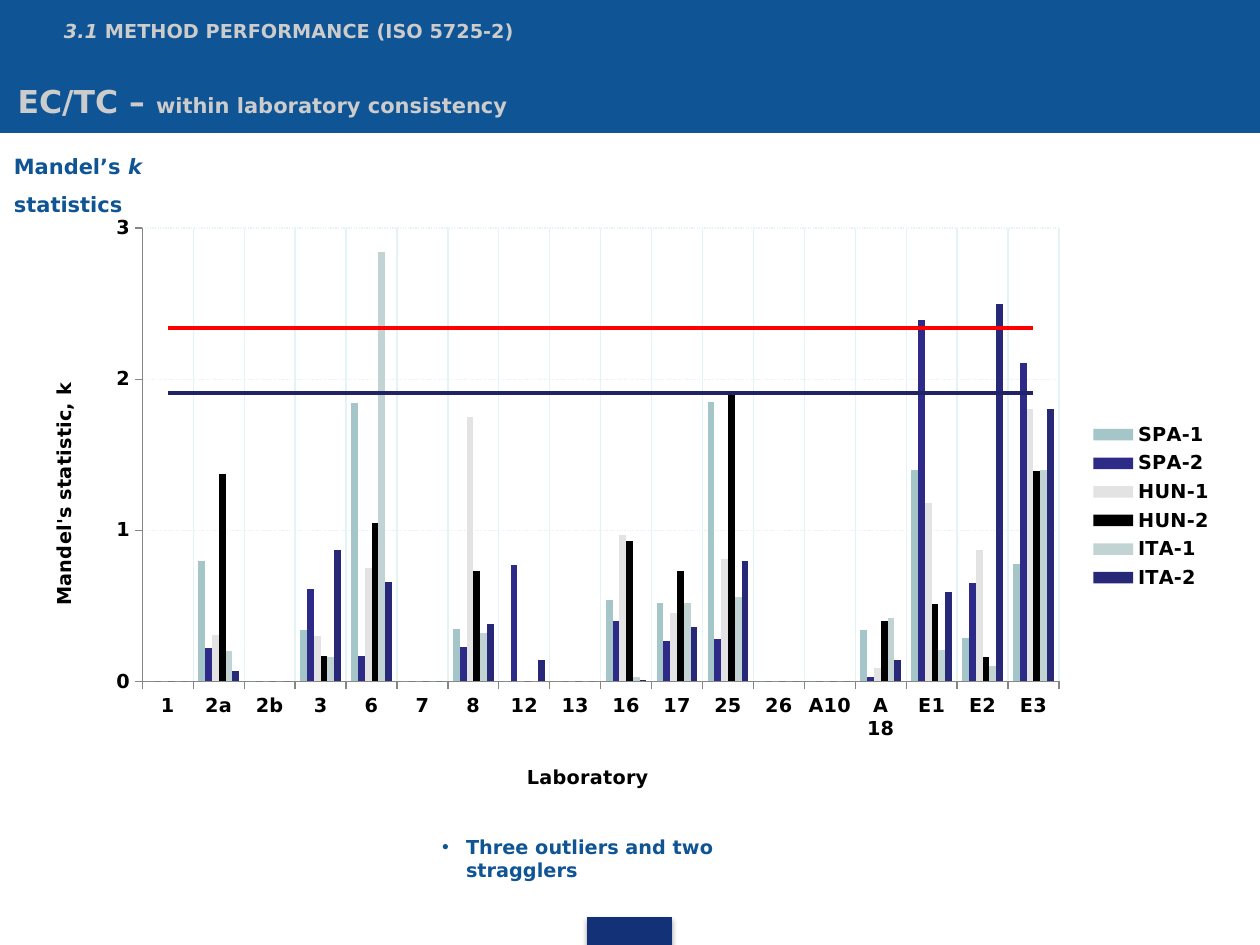
import dataclasses

import lxml.etree
import pptx
import pptx.chart.data
import pptx.dml.color
import pptx.enum.chart
import pptx.enum.dml
import pptx.enum.shapes
import pptx.enum.text
import pptx.oxml.ns
import pptx.util

Cm, Pt = pptx.util.Cm, pptx.util.Pt
qn = pptx.oxml.ns.qn


@dataclasses.dataclass(frozen=True)
class Theme:
    font: str = "DejaVu Sans"
    blue: str = "0F5494"
    navy: str = "133176"
    light: str = "CCCCCC"
    white: str = "FFFFFF"
    black: str = "000000"
    grid: str = "E4F3F4"
    axis: str = "868686"
    bars: tuple = ("A5C6C9", "2D2B87", "E3E3E3", "000000", "C2D3D4", "282878")
    limits: tuple = ("FF0000", "222267")
    small: int = 11
    medium: int = 12
    large: int = 18


theme = Theme()


def rgb(value):
    return pptx.dml.color.RGBColor.from_string(value)


def style(font, size, color):
    """Apply the slide's bold typeface in the given size and colour."""
    font.name, font.bold = theme.font, True
    font.size, font.color.rgb = Pt(size), rgb(color)


deck = pptx.Presentation()
deck.slide_width, deck.slide_height = Cm(25.4), Cm(19.05)
page = deck.slides.add_slide(deck.slide_layouts[1])
title, body = page.placeholders

# Banner and footer tab, behind the placeholders
for left, top, width, height, color in (
    (0, 0, 25.4, 2.67, theme.blue),
    (11.84, 18.49, 1.7, 0.56, theme.navy),
):
    block = page.shapes.add_shape(
        pptx.enum.shapes.MSO_SHAPE.RECTANGLE, Cm(left), Cm(top), Cm(width), Cm(height))
    block.shadow.inherit = False
    block.fill.solid()
    block.fill.fore_color.rgb = block.line.color.rgb = rgb(color)
    block.line.width = Pt(0.75)
    title._element.addprevious(block._element)

effects = block._element.spPr.find(qn("a:effectLst"))
shadow = lxml.etree.SubElement(
    effects, qn("a:outerShdw"), blurRad=str(Pt(3.1)), dist=str(Pt(1.8)), dir="5400000")
shade = lxml.etree.SubElement(shadow, qn("a:srgbClr"), val=theme.black)
lxml.etree.SubElement(shade, qn("a:alpha"), val="35000")

# Texts: box, place, anchor, colour, runs of (text, size, italic)
section = page.shapes.add_textbox(0, 0, 0, 0)
caption = page.shapes.add_textbox(0, 0, 0, 0)
top_anchor = pptx.enum.text.MSO_ANCHOR.TOP
middle = pptx.enum.text.MSO_ANCHOR.MIDDLE
for box, place, anchor, color, spans in (
    (section, (0.05, 0.38, 22.86, 1.5), top_anchor, theme.light,
     (("3.1 ", theme.small, True),
      ("METHOD PERFORMANCE (ISO 5725-2)", theme.small, False))),
    (caption, (0.03, 2.72, 5.3, 1.73), top_anchor, theme.blue,
     (("Mandel’s ", theme.medium, False), ("k", theme.medium, True),
      (" statistics", theme.medium, False))),
    (title, (0.1, 1.52, 10.77, 1.02), middle, theme.light,
     (("EC/TC – ", theme.large, False),
      ("within laboratory consistency", theme.medium, False))),
    (body, (8.66, 16.71, 8.36, 0.74), top_anchor, theme.blue,
     (("Three outliers and two stragglers", theme.small, False),)),
):
    box.left, box.top, box.width, box.height = (Cm(length) for length in place)
    frame = box.text_frame
    frame.auto_size = pptx.enum.text.MSO_AUTO_SIZE.NONE
    frame.word_wrap = box is not body
    frame.vertical_anchor = anchor
    para = frame.paragraphs[0]
    para.alignment = pptx.enum.text.PP_ALIGN.LEFT
    para.space_before = Pt(0)
    if box is body:
        props = para._p.get_or_add_pPr()
        props.set("marL", str(Cm(0.48)))
        props.set("indent", str(Cm(-0.48)))
        lxml.etree.SubElement(props, qn("a:buChar"), char="•")
    style(para.font, spans[0][1], color)
    for text, size, italic in spans:
        span = para.add_run()
        span.text = text
        if size != spans[0][1]:
            span.font.size = Pt(size)
        if italic:
            span.font.italic = True
section.text_frame.margin_left = Cm(1.24)
section.text_frame.margin_top = 0
caption.text_frame.paragraphs[0].line_spacing = 1.5
caption.fill.solid()
caption.fill.fore_color.rgb = rgb(theme.white)

# Chart: clustered columns with two limit lines
labs = ["1", "2a", "2b", "3", "6", "7", "8", "12", "13", "16", "17", "25", "26",
        "A10", "A 18", "E1", "E2", "E3"]
columns = {
    "SPA-1": (0, 0.8, 0, 0.34, 1.84, 0, 0.35, 0, 0, 0.54, 0.52, 1.85, 0, 0, 0.34, 1.4, 0.29, 0.78),
    "SPA-2": (0, 0.22, 0, 0.61, 0.17, 0, 0.23, 0.77, 0, 0.4, 0.27, 0.28, 0, 0, 0.03, 2.39, 0.65, 2.11),
    "HUN-1": (0, 0.31, 0, 0.3, 0.75, 0, 1.75, 0, 0, 0.97, 0.45, 0.81, 0, 0, 0.09, 1.18, 0.87, 1.8),
    "HUN-2": (0, 1.37, 0, 0.17, 1.05, 0, 0.73, 0, 0, 0.93, 0.73, 1.92, 0, 0, 0.4, 0.51, 0.16, 1.39),
    "ITA-1": (0, 0.2, 0, 0.16, 2.84, 0, 0.32, 0, 0, 0.03, 0.52, 0.56, 0, 0, 0.42, 0.21, 0.1, 1.4),
    "ITA-2": (0, 0.07, 0, 0.87, 0.66, 0, 0.38, 0.14, 0, 0.01, 0.36, 0.8, 0, 0, 0.14, 0.59, 2.5, 1.8),
}
limits = {"Series 7": 2.34, "Series 8": 1.91}
data = pptx.chart.data.CategoryChartData()
data.categories = labs
for name, values in columns.items():
    data.add_series(name, values)
for name, value in limits.items():
    data.add_series(name, [value] * len(labs))
chart = page.shapes.add_chart(
    pptx.enum.chart.XL_CHART_TYPE.COLUMN_CLUSTERED,
    Cm(0.71), Cm(4.11), Cm(24), Cm(12.19), data).chart
chart.has_title = False
style(chart.font, theme.small, theme.black)
bars = chart.plots[0]
bars.gap_width, bars.overlap, bars.vary_by_categories = 150, 0, False

# Move the limit series from the column plot to a line plot on the same axes
bar_xml = bars._element
line_xml = bar_xml.makeelement(qn("c:lineChart"))
lxml.etree.SubElement(line_xml, qn("c:grouping"), val="standard")
lxml.etree.SubElement(line_xml, qn("c:varyColors"), val="0")
for series_xml in bar_xml.findall(qn("c:ser"))[len(columns):]:
    for bar_only in series_xml.findall(qn("c:invertIfNegative")):
        series_xml.remove(bar_only)
    line_xml.append(series_xml)
lxml.etree.SubElement(line_xml, qn("c:marker"), val="1")
for axis_id in bar_xml.findall(qn("c:axId")):
    lxml.etree.SubElement(line_xml, qn("c:axId"), val=axis_id.get("val"))
bar_xml.addnext(line_xml)

for series, color in zip(bars.series, theme.bars):
    series.format.fill.solid()
    series.format.fill.fore_color.rgb = rgb(color)
for series, color in zip(chart.plots[1].series, theme.limits):
    series.smooth = False
    series.marker.style = pptx.enum.chart.XL_MARKER_STYLE.NONE
    series.format.line.color.rgb = rgb(color)
    series.format.line.width = Pt(2.25)

chart.has_legend = True
chart.legend.position = pptx.enum.chart.XL_LEGEND_POSITION.RIGHT
chart.legend.include_in_layout = False
position = chart.legend._element.find(qn("c:legendPos"))
for index in reversed(range(len(columns), len(columns) + len(limits))):
    entry = lxml.etree.Element(qn("c:legendEntry"))
    lxml.etree.SubElement(entry, qn("c:idx"), val=str(index))
    lxml.etree.SubElement(entry, qn("c:delete"), val="1")
    position.addnext(entry)

values_axis, labs_axis = chart.value_axis, chart.category_axis
values_axis.minimum_scale, values_axis.maximum_scale, values_axis.major_unit = 0, 3, 1
values_axis.tick_labels.number_format = "0"
values_axis.tick_labels.number_format_is_linked = False
layouts = [(chart._chartSpace.chart.plotArea, {"x": 0.09, "y": 0.04, "w": 0.77, "h": 0.75})]
for axis, text, x, y in ((labs_axis, "Laboratory", 0.41, 0.92),
                         (values_axis, "Mandel's statistic, k", 0.01, 0.29)):
    axis.has_major_gridlines = True
    axis.major_gridlines.format.line.color.rgb = rgb(theme.grid)
    axis.major_gridlines.format.line.width = Pt(0.75)
    axis.major_tick_mark = pptx.enum.chart.XL_TICK_MARK.OUTSIDE
    axis.format.line.color.rgb = rgb(theme.axis)
    para = axis.axis_title.text_frame.paragraphs[0]
    para.text = text
    style(para.font, theme.small, theme.black)
    layouts.append((axis.axis_title._element, {"x": x, "y": y}))
values_axis.major_gridlines.format.line.dash_style = pptx.enum.dml.MSO_LINE.ROUND_DOT

for owner, lengths in layouts:
    for old in owner.findall(qn("c:layout")):
        owner.remove(old)
    layout = lxml.etree.Element(qn("c:layout"))
    manual = lxml.etree.SubElement(layout, qn("c:manualLayout"))
    if "w" in lengths:
        lxml.etree.SubElement(manual, qn("c:layoutTarget"), val="inner")
    for side in ("x", "y"):
        lxml.etree.SubElement(manual, qn(f"c:{side}Mode"), val="edge")
    for side, length in lengths.items():
        lxml.etree.SubElement(manual, qn(f"c:{side}"), val=str(length))
    text_xml = owner.find(qn("c:tx"))
    if text_xml is None:
        owner.insert(0, layout)
    else:
        text_xml.addnext(layout)

deck.save("out.pptx")
